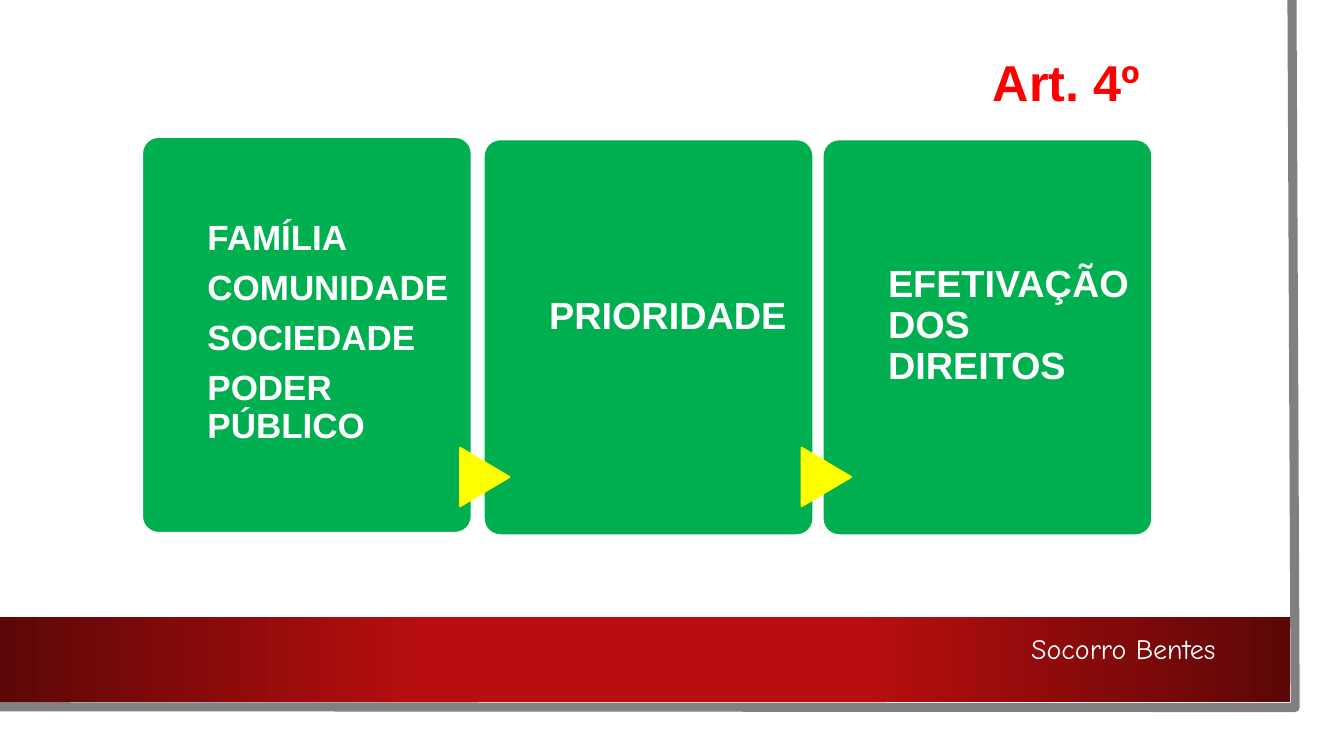
from pptx import Presentation
from pptx.dml.color import RGBColor
from pptx.enum.shapes import MSO_SHAPE
from pptx.enum.text import PP_ALIGN
from pptx.oxml import parse_xml
from pptx.oxml.ns import nsdecls
from pptx.util import Cm, Pt

WHITE = RGBColor(0xFF, 0xFF, 0xFF)
GREEN = RGBColor(0x00, 0xB0, 0x50)
YELLOW = RGBColor(0xFF, 0xFF, 0x00)
RED = RGBColor(0xFF, 0x00, 0x00)
CRIMSON = RGBColor(0xB8, 0x0E, 0x0F)
MAROON = RGBColor(0x5C, 0x07, 0x07)
GRAY = RGBColor(0x80, 0x80, 0x80)

BAND_STOPS = [(0, MAROON), (33, CRIMSON), (67, CRIMSON), (100, MAROON)]
CARD_WIDTH, CARD_HEIGHT = 8.31, 9.98
CARDS = [
    (3.58, 3.45, 5.56, 25, ["FAMÍLIA", "COMUNIDADE", "SOCIEDADE", "PODER PÚBLICO"]),
    (12.19, 3.51, 7.49, 27, ["PRIORIDADE"]),
    (20.73, 3.51, 6.68, 27, ["EFETIVAÇÃO DOS DIREITOS"]),
]
ARROWS = [None, 11.48, 20.09]


class ArticleSlide:
    """Draws the parts of the slide in one shared style."""

    def __init__(self, slide, font="Arial"):
        self.shapes = slide.shapes
        self.font = font

    def label(self, lines, left, top, width, height, size, color=WHITE, font=None,
              bold=True, align=PP_ALIGN.LEFT, inset=0.0, spacing=1.0, after=0.0):
        frame = self.shapes.add_textbox(Cm(left), Cm(top), Cm(width), Cm(height)).text_frame
        frame.word_wrap = True
        frame.margin_left = frame.margin_right = Cm(inset)
        frame.margin_top = frame.margin_bottom = Cm(inset / 2)
        frame.text = "\n".join(lines)
        for line in frame.paragraphs:
            line.alignment = align
            line.line_spacing = spacing
            line.space_after = Pt(after)
            for run in line.runs:
                run.font.name = font or self.font
                run.font.size = Pt(size)
                run.font.bold = bold
                run.font.color.rgb = color

    def block(self, kind, left, top, width, height, fill, line=None):
        block = self.shapes.add_shape(kind, Cm(left), Cm(top), Cm(width), Cm(height))
        block.shadow.inherit = False
        block.fill.solid()
        block.fill.fore_color.rgb = fill
        if line is None:
            block.line.fill.background()
        else:
            block.line.color.rgb = line
            block.line.width = Pt(1.5)
        return block

    def page_edge(self, points, color, width):
        start, *others = [(Cm(x), Cm(y)) for x, y in points]
        builder = self.shapes.build_freeform(*start)
        builder.add_line_segments(others, close=False)
        edge = builder.convert_to_shape()
        edge.shadow.inherit = False
        edge.fill.background()
        edge.line.color.rgb = color
        edge.line.width = Pt(width)

    def band(self, left, top, width, height, stops):
        band = self.block(MSO_SHAPE.RECTANGLE, left, top, width, height, CRIMSON)
        band.fill.gradient()
        band.fill.gradient_angle = 0
        stop_list = band.fill.gradient_stops[0]._gs.getparent()
        for old_stop in list(stop_list):
            stop_list.remove(old_stop)
        for percent, color in stops:
            stop_list.append(parse_xml(
                f'<a:gs {nsdecls("a")} pos="{percent * 1000}">'
                f'<a:srgbClr val="{color}"/></a:gs>'))

    def card(self, left, top, text_top, size, lines):
        card = self.block(MSO_SHAPE.ROUNDED_RECTANGLE, left, top,
                          CARD_WIDTH, CARD_HEIGHT, GREEN, WHITE)
        card.adjustments[0] = 0.05
        self.label(lines, left + 1.65, text_top, 6.2, top + CARD_HEIGHT - text_top,
                   size, spacing=0.9, after=size * 0.35)

    def arrow(self, left):
        arrow = self.block(MSO_SHAPE.FLOWCHART_EXTRACT, left, 11.4, 1.47, 1.24,
                           YELLOW, YELLOW)
        arrow.rotation = 90


def main():
    deck = Presentation()
    deck.slide_width, deck.slide_height = Cm(33.87), Cm(19.05)
    article = ArticleSlide(deck.slides.add_slide(deck.slide_layouts[6]))

    article.page_edge([(32.56, 0), (32.64, 17.83), (0, 17.81)], GRAY, 6.5)
    article.band(0, 15.54, 32.51, 2.16, BAND_STOPS)
    article.label(["Socorro Bentes"], 20.37, 15.8, 10.52, 1.12, 20, font="Comic Neue",
                  bold=False, align=PP_ALIGN.RIGHT, inset=0.25)
    for card, arrow_left in zip(CARDS, ARROWS):
        article.card(*card)
        if arrow_left is not None:
            article.arrow(arrow_left)
    article.label(["Art. 4º"], 22.86, 1.17, 6.12, 1.8, 36, color=RED,
                  align=PP_ALIGN.RIGHT, inset=0.25)

    deck.save("out.pptx")


if __name__ == "__main__":
    main()
